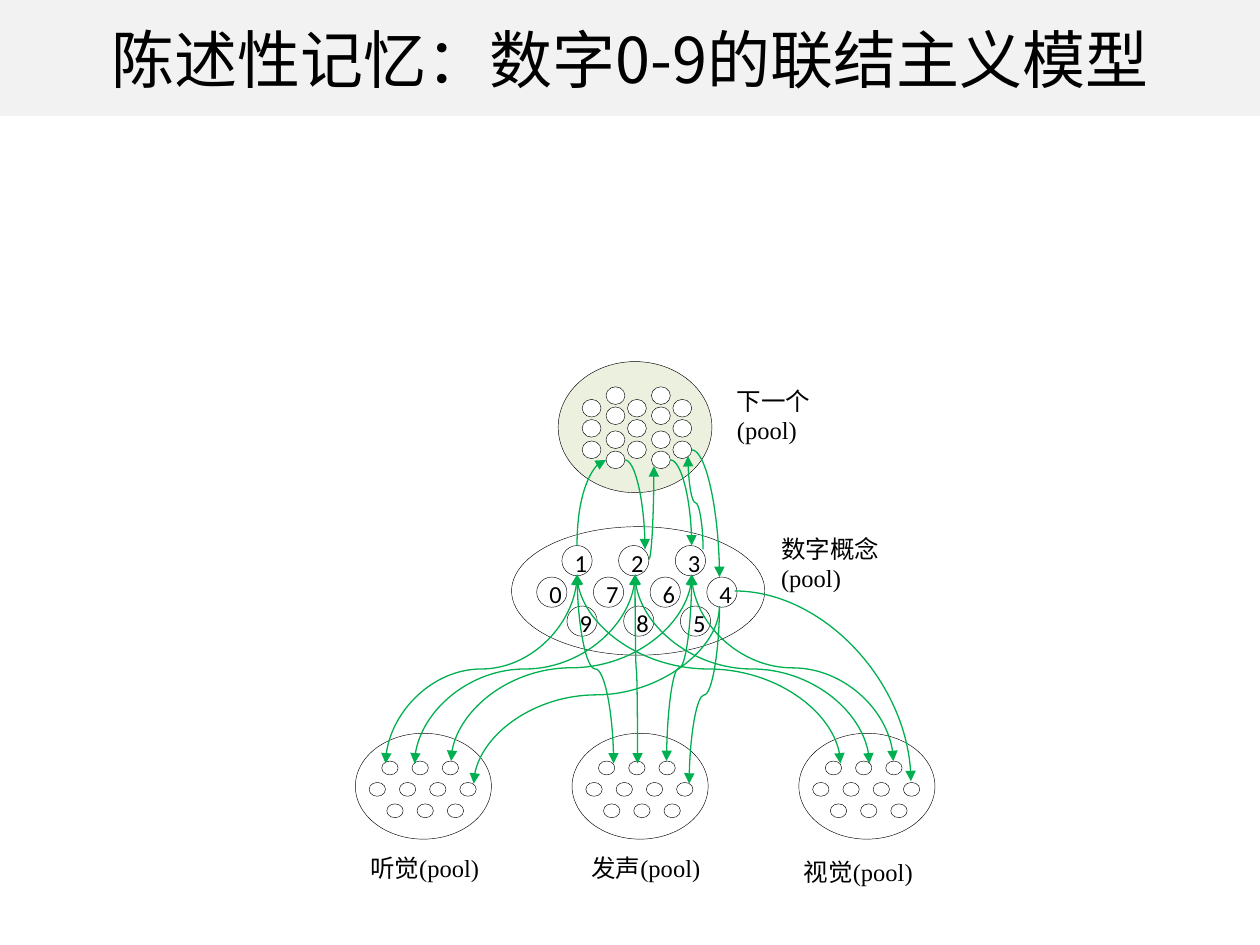
from lxml import etree
from pptx import Presentation
from pptx.dml.color import RGBColor
from pptx.enum.shapes import MSO_CONNECTOR, MSO_SHAPE
from pptx.enum.text import MSO_ANCHOR, PP_ALIGN
from pptx.oxml.ns import qn
from pptx.util import Inches, Pt

CJK = "Noto Sans CJK SC"


def add_shape(kind, x, y, w, h, fill=None, line="000000"):
    sp = s.shapes.add_shape(kind, Inches(x), Inches(y), Inches(w), Inches(h))
    sp.shadow.inherit = False
    if fill:
        sp.fill.solid()
        sp.fill.fore_color.rgb = RGBColor.from_string(fill)
    else:
        sp.fill.background()
    if line:
        sp.line.color.rgb = RGBColor.from_string(line)
        sp.line.width = Pt(0.25)
    else:
        sp.line.fill.background()
    return sp


def set_text(sp, text, size, font, align):
    tf = sp.text_frame
    tf.text = text
    tf.vertical_anchor = MSO_ANCHOR.MIDDLE
    for p in tf.paragraphs:
        p.alignment = align
        for r in p.runs:
            r.font.size = Pt(size)
            r.font.name = font
            r.font.color.rgb = RGBColor.from_string("000000")
            etree.SubElement(r.font._element, qn("a:ea"), typeface=CJK)
    return tf


prs = Presentation()
prs.slide_width, prs.slide_height = Inches(10), Inches(7.5)
s = prs.slides.add_slide(prs.slide_layouts[6])

title = add_shape(MSO_SHAPE.RECTANGLE, 0, 0, 10, 0.92, "F2F2F2", None)
set_text(title, "陈述性记忆：数字0-9的联结主义模型", 36, CJK, PP_ALIGN.CENTER)

add_shape(MSO_SHAPE.OVAL, 4.06, 4.18, 2.01, 1.02)
add_shape(MSO_SHAPE.OVAL, 4.43, 2.87, 1.22, 1.04, "EBF1DE")
next_columns = [
    ((4.62, 4.98, 5.34), (3.17, 3.33, 3.5)),
    ((4.81, 5.17), (3.07, 3.23, 3.42, 3.58)),
]
for xs, ys in next_columns:
    for x in xs:
        for y in ys:
            add_shape(MSO_SHAPE.OVAL, x, y, 0.15, 0.14, "FFFFFF")

digit_rows = [(4.46, 4.33, "123"), (4.26, 4.58, "0764"), (4.5, 4.81, "985")]
for left, y, digits in digit_rows:
    for i, digit in enumerate(digits):
        sp = add_shape(MSO_SHAPE.OVAL, left + i * 0.45, y, 0.24, 0.24, "FFFFFF")
        tf = set_text(sp, digit, 14, "Calibri", PP_ALIGN.CENTER)
        tf.word_wrap = False
        tf.margin_left, tf.margin_top = Inches(0.06), Inches(0.03)
        tf.margin_right = tf.margin_bottom = 0

cell_rows = [(0.21, 6.04, 3), (0.11, 6.21, 4), (0.25, 6.38, 3)]
for left in (2.82, 4.54, 6.34):
    add_shape(MSO_SHAPE.OVAL, left, 5.82, 1.08, 0.84)
    for dx, y, count in cell_rows:
        for i in range(count):
            add_shape(MSO_SHAPE.OVAL, left + dx + i * 0.24, y, 0.13, 0.11)

labels = [
    ("下一个\n(pool)", 5.75, 3.06, 0.98, 0.47, PP_ALIGN.LEFT),
    ("数字概念\n(pool)", 6.1, 4.1, 1.12, 0.74, PP_ALIGN.LEFT),
    ("听觉(pool)", 2.79, 6.76, 1.16, 0.25, PP_ALIGN.CENTER),
    ("发声(pool)", 4.22, 6.72, 1.81, 0.34, PP_ALIGN.CENTER),
    ("视觉(pool)", 6.28, 6.79, 1.26, 0.25, PP_ALIGN.LEFT),
]
for text, x, y, w, h, align in labels:
    sp = s.shapes.add_textbox(Inches(x), Inches(y), Inches(w), Inches(h))
    set_text(sp, text, 14, "Times New Roman", align).word_wrap = True

ARC, WAVE = "curvedConnector2", "curvedConnector3"
END, BOTH = ("tailEnd",), ("headEnd", "tailEnd")
curves = [
    (4.58, 4.33, 4.81, 3.65, ARC, True, END),
    (4.96, 3.65, 5.12, 4.36, ARC, False, END),
    (5.15, 4.44, 5.19, 3.7, ARC, False, END),
    (5.32, 3.65, 5.49, 4.33, ARC, False, END),
    (5.58, 4.36, 5.46, 3.62, WAVE, True, END),
    (5.49, 3.57, 5.71, 4.58, ARC, False, END),
    (5.71, 4.81, 5.47, 6.22, WAVE, True, END),
    (5.71, 4.81, 3.76, 6.22, WAVE, True, END),
    (5.83, 4.69, 7.23, 6.2, ARC, False, END),
]
pool_targets = [
    (4.58, 6.06, (3.06, 4.87, 6.67)),
    (5.04, 6.06, (3.29, 5.06, 6.9)),
    (5.49, 6.04, (3.58, 5.29, 7.09)),
]
for x1, y2, targets in pool_targets:
    for x2 in targets:
        curves.append((x1, 4.56, x2, y2, WAVE, True, BOTH))

for x1, y1, x2, y2, preset, vertical, heads in curves:
    down = y2 > y1
    if vertical:
        cx, cy = (x1 + x2) / 2, (y1 + y2) / 2
        half_w = abs(y2 - y1) / 2
        half_h = (x2 - x1) / 2 if down else (x1 - x2) / 2
        x1, y1, x2, y2 = cx - half_w, cy + half_h, cx + half_w, cy - half_h
    c = s.shapes.add_connector(
        MSO_CONNECTOR.CURVE, Inches(x1), Inches(y1), Inches(x2), Inches(y2))
    c.line.color.rgb = RGBColor.from_string("00B050")
    c.line.width = Pt(0.75)
    spPr = c._element.spPr
    spPr.find(qn("a:prstGeom")).set("prst", preset)
    if vertical:
        spPr.find(qn("a:xfrm")).set("rot", str((90 if down else 270) * 60000))
    for head in heads:
        etree.SubElement(spPr.find(qn("a:ln")), qn("a:" + head), type="triangle")
    etree.SubElement(spPr, qn("a:effectLst"))

prs.save("out.pptx")
